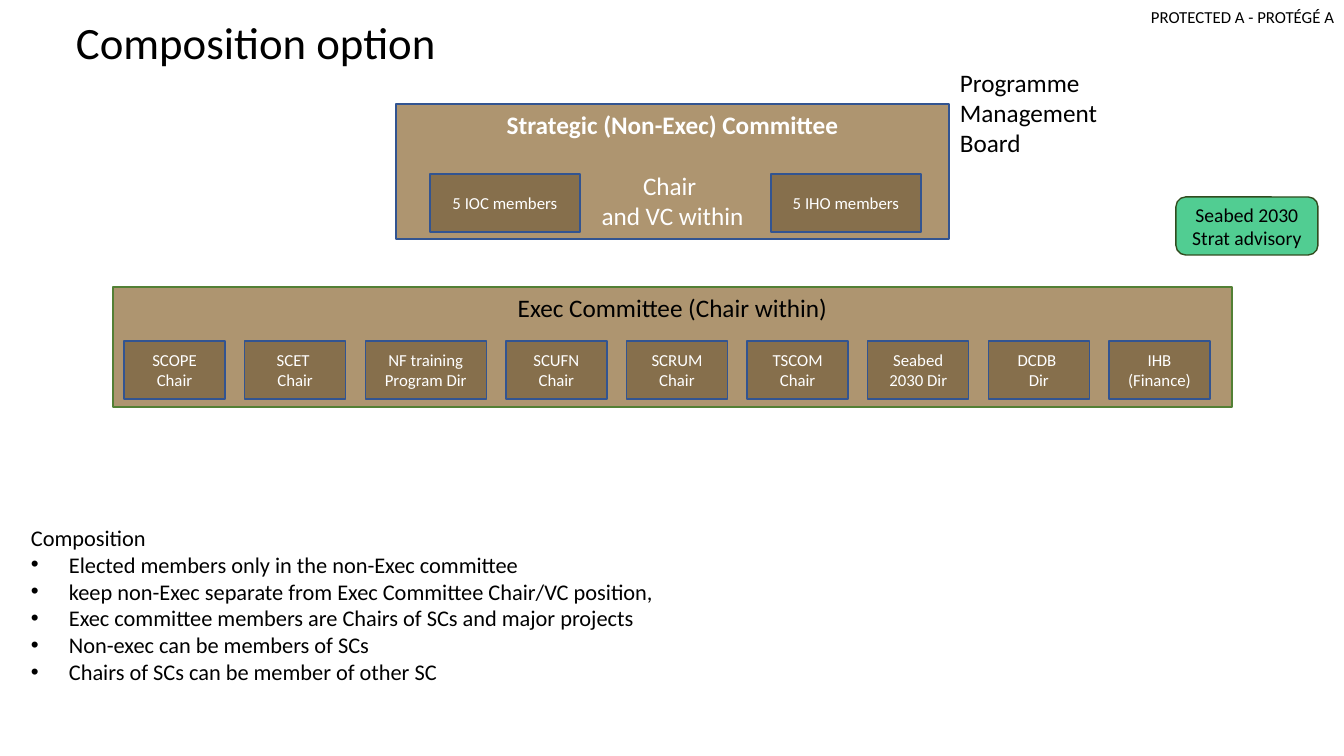
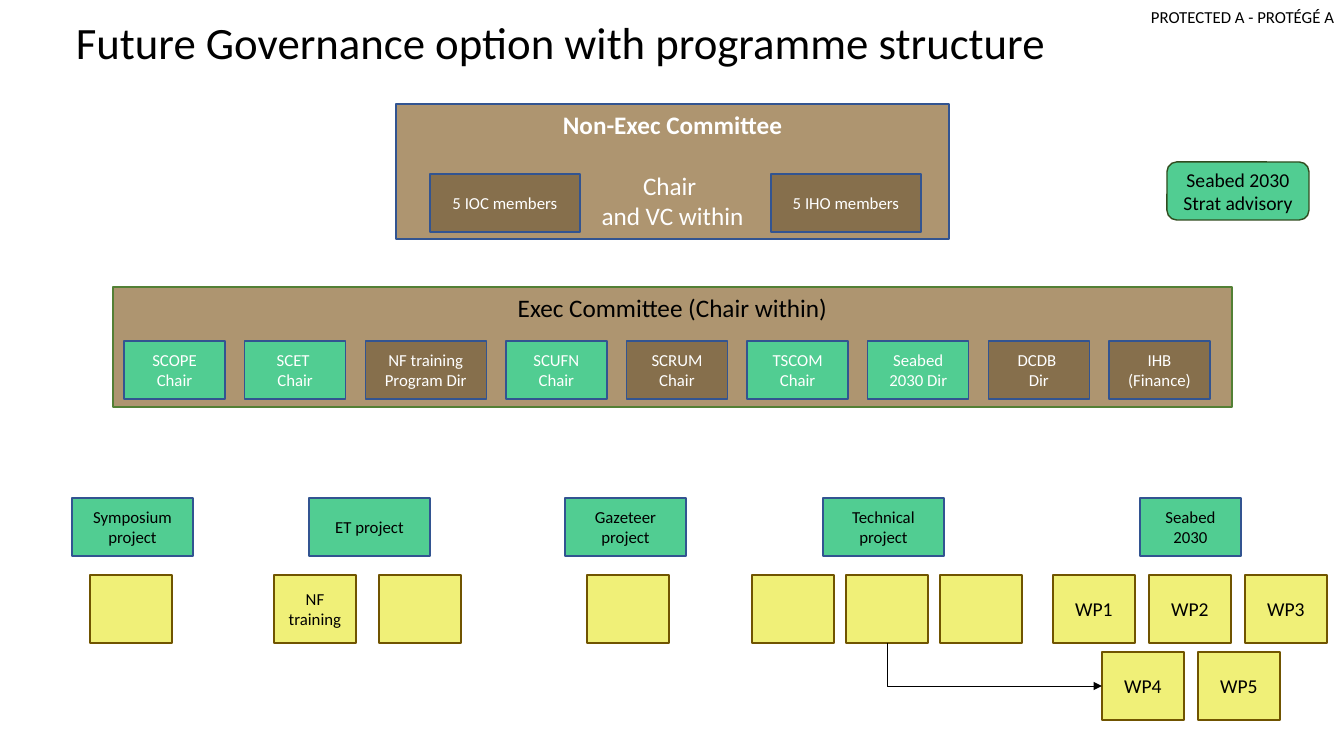
"""Build two slides on committee composition and programme governance."""
import lxml.etree
import pptx
import pptx.dml.color
import pptx.enum.shapes
import pptx.enum.text
import pptx.oxml.ns
import pptx.util

RGBColor = pptx.dml.color.RGBColor
Preset = pptx.enum.shapes.MSO_SHAPE
Align = pptx.enum.text.PP_ALIGN
Anchor = pptx.enum.text.MSO_ANCHOR

BLACK = RGBColor(0x00, 0x00, 0x00)
WHITE = RGBColor(0xFF, 0xFF, 0xFF)
TAN = RGBColor(0xAE, 0x95, 0x70)
BROWN = RGBColor(0x86, 0x6F, 0x4C)
GREEN = RGBColor(0x51, 0xCD, 0x92)
YELLOW = RGBColor(0xF0, 0xF0, 0x78)
BLUE_EDGE = RGBColor(0x32, 0x54, 0x91)
GREEN_EDGE = RGBColor(0x53, 0x80, 0x35)
DARK_GREEN_EDGE = RGBColor(0x31, 0x4C, 0x1F)
OCHRE_EDGE = RGBColor(0x70, 0x54, 0x00)

FONT = "Calibri"
EMU_PER_PX = 914400 / 100.8
SLIDE_SIZE = (1344, 756)
BOX_HEIGHT = 58
PACKAGE_SIZE = (82, 68)
PACKAGE_TOPS = (575, 652)
PROJECT_TOP = 498
MEMBER_TOP = 341
MEMBER_SPAN = (124, 1210)
BULLET_INDENT = 38

MARKING = "PROTECTED A - PROTÉGÉ A"
COUNCIL_SEATS = [("5 IOC members", 430), ("5 IHO members", 771)]
MEMBERS = [
    ("SCOPE Chair", 101), ("SCET \nChair", 101), ("NF training Program Dir", 121),
    ("SCUFN Chair", 101), ("SCRUM Chair", 101), ("TSCOM Chair", 101),
    ("Seabed 2030 Dir", 101), ("DCDB \nDir", 101), ("IHB\n(Finance)", 101),
]
PROGRAMME_MEMBERS = {"SCOPE Chair", "SCET \nChair", "SCUFN Chair", "TSCOM Chair", "Seabed 2030 Dir"}
COMPOSITION_RULES = [
    "Elected members only in the non-Exec committee",
    "keep non-Exec separate from Exec Committee Chair/VC position,",
    "Exec committee members are Chairs of SCs and major projects",
    "Non-exec can be members of SCs",
    "Chairs of SCs can be member of other SC",
]
PROJECTS = [
    ("Symposium project", 72, 121), ("ET project", 309, 121), ("Gazeteer project", 565, 121),
    ("Technical project", 823, 121), ("Seabed 2030", 1140, 101),
]
PACKAGE_ROWS = [
    (0, 90, 0, 12, [""]),
    (0, 274, 105, 12, ["NF training", ""]),
    (0, 587, 0, 12, [""]),
    (0, 752, 94, 12, ["", "", ""]),
    (0, 1053, 96, 14, ["WP1", "WP2", "WP3"]),
    (1, 1102, 96, 14, ["WP4", "WP5"]),
]


def px(length):
    return pptx.util.Emu(round(length * EMU_PER_PX))


def write(shape, text, size, color, align=Align.LEFT, **frame_format):
    frame = shape.text_frame
    for name, value in frame_format.items():
        setattr(frame, name, value)
    frame.text = text
    for paragraph in frame.paragraphs:
        paragraph.alignment = align
        font_format = {"name": FONT, "size": pptx.util.Pt(size)}
        for name, value in font_format.items():
            setattr(paragraph.font, name, value)
            for run in paragraph.runs:
                setattr(run.font, name, value)
        for run in paragraph.runs:
            run.font.color.rgb = color
    return frame.paragraphs


def add_label(slide, area, text, size, **frame_format):
    shape = slide.shapes.add_textbox(*map(px, area))
    return write(shape, text, size, BLACK, **frame_format)


def add_box(slide, area, text, fill, edge=BLUE_EDGE, color=WHITE, size=12,
            anchor=Anchor.MIDDLE, preset=Preset.RECTANGLE):
    shape = slide.shapes.add_shape(preset, *map(px, area))
    shape.shadow.inherit = False
    shape.fill.solid()
    shape.fill.fore_color.rgb = fill
    shape.line.color.rgb = edge
    shape.line.width = pptx.util.Pt(1)
    if text:
        write(shape, text, size, color, Align.CENTER, vertical_anchor=anchor, word_wrap=True)
    return shape


def add_bullet(paragraph):
    properties = paragraph._p.get_or_add_pPr()
    properties.set("marL", str(px(BULLET_INDENT)))
    properties.set("indent", str(-px(BULLET_INDENT)))
    for tag, attribute, value in (("a:buFont", "typeface", "Arial"), ("a:buChar", "char", "•")):
        lxml.etree.SubElement(properties, pptx.oxml.ns.qn(tag)).set(attribute, value)


def add_down_then_right_arrow(slide, source, target):
    connector = slide.shapes.add_connector(pptx.enum.shapes.MSO_CONNECTOR.ELBOW, 0, 0, 1, 1)
    connector.begin_connect(source, 2)
    connector.end_connect(target, 1)
    left, top, width, height = connector.left, connector.top, connector.width, connector.height
    connector.left = left + (width - height) // 2
    connector.top = top + (height - width) // 2
    connector.width, connector.height = height, width
    connector.line.color.rgb = BLACK
    connector.line.width = pptx.util.Pt(0.5)
    properties = connector._element.spPr
    properties.xfrm.set("rot", "16200000")
    properties.xfrm.set("flipH", "1")
    properties.find(pptx.oxml.ns.qn("a:prstGeom")).set("prst", "bentConnector2")
    line = properties.find(pptx.oxml.ns.qn("a:ln"))
    lxml.etree.SubElement(line, pptx.oxml.ns.qn("a:tailEnd")).set("type", "triangle")
    lxml.etree.SubElement(properties, pptx.oxml.ns.qn("a:effectLst"))


def add_governance_slide(presentation, title, council, advisory_at, green_members=()):
    slide = presentation.slides.add_slide(presentation.slide_layouts[6])
    no_margins = dict.fromkeys(("margin_left", "margin_top", "margin_right", "margin_bottom"), 0)
    add_label(slide, (1151, 7, 190, 20), MARKING, 12, word_wrap=False, **no_margins)
    add_label(slide, (66, 10, 1000, 64), title, 32, word_wrap=False)

    panel = add_box(slide, (396, 104, 553, 135), f"{council}\nChair \nand VC within", TAN,
                    size=18, anchor=Anchor.TOP)
    heading, chair, _ = panel.text_frame.paragraphs
    heading.runs[0].font.bold = True
    chair.space_before = pptx.util.Pt(22)
    for seat, left in COUNCIL_SEATS:
        add_box(slide, (left, 174, 150, BOX_HEIGHT), seat, BROWN)

    add_box(slide, (113, 287, 1119, 120), "Exec Committee (Chair within)", TAN,
            GREEN_EDGE, BLACK, 18, Anchor.TOP)
    left, right = MEMBER_SPAN
    gap = (right - left - sum(width for _, width in MEMBERS)) / (len(MEMBERS) - 1)
    for member, width in MEMBERS:
        fill = GREEN if member in green_members else BROWN
        add_box(slide, (left, MEMBER_TOP, width, BOX_HEIGHT), member, fill)
        left += width + gap

    add_box(slide, (*advisory_at, 142, BOX_HEIGHT), "Seabed 2030 Strat advisory", GREEN,
            DARK_GREEN_EDGE, BLACK, 14, preset=Preset.ROUNDED_RECTANGLE)
    return slide


def add_composition(slide):
    add_label(slide, (950, 62, 166, 102), "Programme Management Board", 18, word_wrap=True)
    text = "\n".join(["Composition", *COMPOSITION_RULES])
    paragraphs = add_label(slide, (21, 519, 647, 173), text, 16, word_wrap=True)
    for paragraph in paragraphs[1:]:
        add_bullet(paragraph)


def add_programme(slide):
    for project, left, width in PROJECTS:
        add_box(slide, (left, PROJECT_TOP, width, BOX_HEIGHT), project, GREEN, color=BLACK)
    rows = []
    for level, left, pitch, size, labels in PACKAGE_ROWS:
        rows.append([
            add_box(slide, (left + index * pitch, PACKAGE_TOPS[level], *PACKAGE_SIZE), label,
                    YELLOW, OCHRE_EDGE, BLACK, size)
            for index, label in enumerate(labels)
        ])
    technical_row, second_seabed_row = rows[3], rows[5]
    add_down_then_right_arrow(slide, technical_row[1], second_seabed_row[0])


def main():
    presentation = pptx.Presentation()
    presentation.slide_width, presentation.slide_height = map(px, SLIDE_SIZE)
    add_composition(add_governance_slide(
        presentation, "Composition option", "Strategic (Non-Exec) Committee", (1176, 197)))
    add_programme(add_governance_slide(
        presentation, "Future Governance option with programme structure",
        "Non-Exec Committee", (1167, 162), PROGRAMME_MEMBERS))
    presentation.save("out.pptx")


if __name__ == "__main__":
    main()
